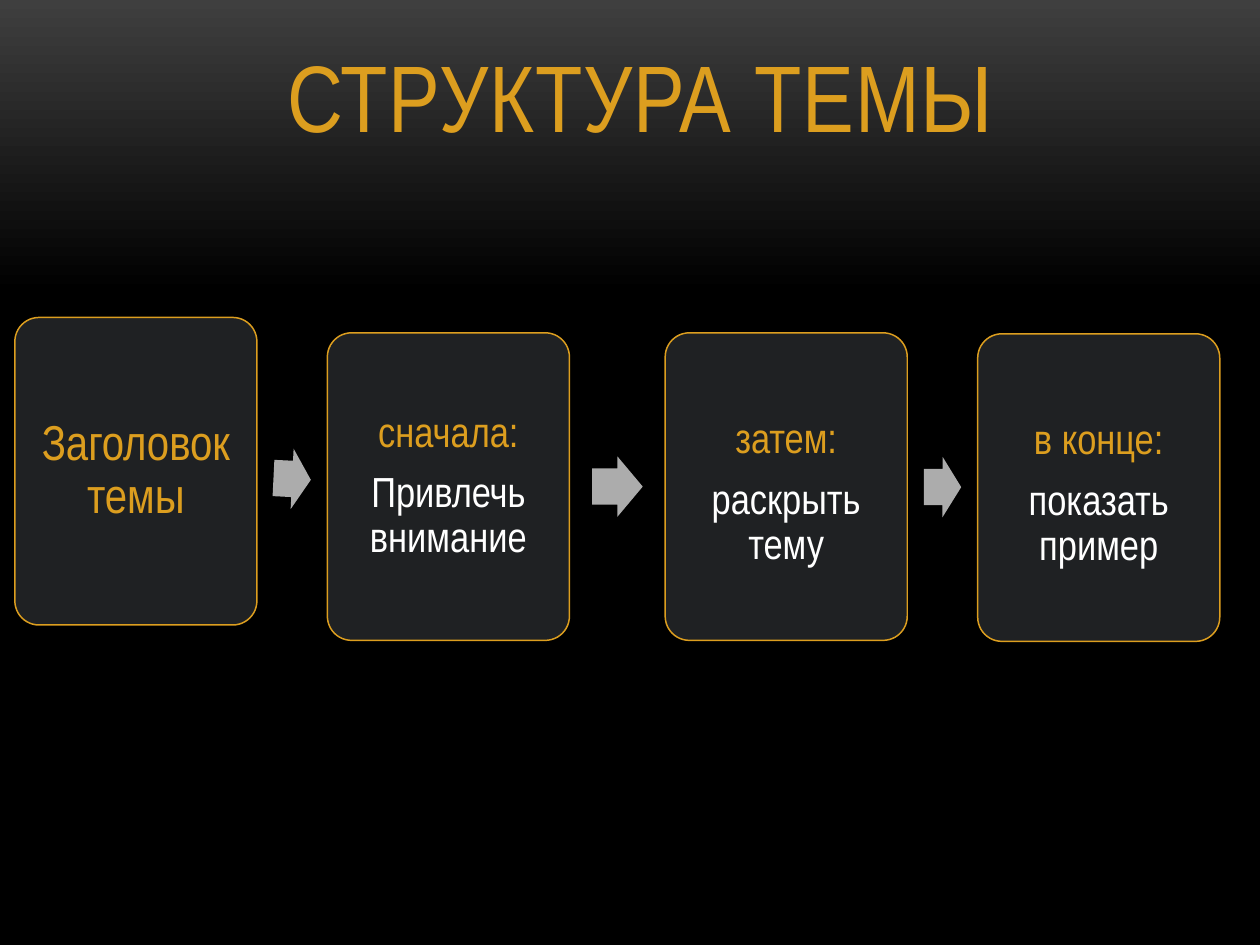
from itertools import pairwise
from math import atan2, degrees

from pptx import Presentation
from pptx.dml.color import RGBColor
from pptx.enum.shapes import MSO_SHAPE as Shape
from pptx.enum.text import MSO_ANCHOR as Anchor, PP_ALIGN as Align
from pptx.util import Cm, Pt

COLORS = {
    "glow": "3F3F3F",
    "black": "000000",
    "gold": "DC9E1F",
    "card": "1F2123",
    "arrow": "ACACAC",
    "white": "FFFFFF",
}
FONT = "Arial Narrow"
CARD_WIDTH, CARD_HEIGHT = 4.88, 6.2
ARROW_HEIGHT, ARROW_SHARE = 1.22, 0.53
STEPS = [
    (0, 0, 28, 0, ["Заголовок темы"]),
    (6.3, 0.31, 24, 0, ["сначала:", "Привлечь внимание"]),
    (13.11, 0.31, 24, 0.26, ["затем:", "раскрыть тему"]),
    (19.41, 0.33, 24, 0.26, ["в конце:", "показать пример"]),
]


def color(name):
    """Return the named colour of the palette."""
    return RGBColor.from_string(COLORS[name])


def write(para, text, *, size, tone, line=1.0, after=0, spacing=0):
    """Write one centred paragraph with the given format."""
    para.alignment = Align.CENTER
    para.line_spacing = line
    para.space_after = Pt(after)
    span = para.add_run()
    span.text = text
    span.font.name = FONT
    span.font.size = Pt(size)
    span.font.color.rgb = color(tone)
    if spacing:
        span.font._element.set("spc", str(round(spacing * 100)))


def add_solid(page, kind, left, top, width, height, tone):
    """Add a plain filled shape without line or shadow."""
    shape = page.shapes.add_shape(kind, Cm(left), Cm(top), Cm(width), Cm(height))
    shape.shadow.inherit = False
    shape.fill.solid()
    shape.fill.fore_color.rgb = color(tone)
    shape.line.fill.background()
    return shape


def add_background(page):
    """Fade the page from grey at the top to black."""
    fill = page.background.fill
    fill.gradient()
    fill.gradient_angle = 270
    for stop, tone, position in zip(fill.gradient_stops, ("glow", "black"), (0, 0.31)):
        stop.color.rgb = color(tone)
        stop.position = position


def add_title(page, left, top, width, height):
    """Place the heading at the bottom of its box."""
    box = page.shapes.add_textbox(Cm(left), Cm(top), Cm(width), Cm(height))
    frame = box.text_frame
    frame.word_wrap = True
    frame.vertical_anchor = Anchor.BOTTOM
    write(frame.paragraphs[0], "СТРУКТУРА ТЕМЫ", size=54, tone="gold", spacing=0.5)


def add_card(page, left, top, size, drop, lines):
    """Place a rounded card with a gold heading and white text."""
    card = add_solid(page, Shape.ROUNDED_RECTANGLE, left, top, CARD_WIDTH, CARD_HEIGHT, "card")
    card.adjustments[0] = 0.1
    card.line.color.rgb = color("gold")
    card.line.width = Pt(0.85)
    frame = card.text_frame
    frame.word_wrap = True
    frame.vertical_anchor = Anchor.MIDDLE
    frame.margin_left = frame.margin_right = frame.margin_bottom = Cm(0.4)
    frame.margin_top = Cm(0.4 + drop)
    for index, (text, tone) in enumerate(zip(lines, ("gold", "white"))):
        para = frame.add_paragraph() if index else frame.paragraphs[0]
        write(para, text, size=size, tone=tone, line=0.9, after=0.35 * size)


def add_arrow(page, start, end):
    """Place an arrow midway between two cards, turned towards the second."""
    (x1, y1), (x2, y2) = start, end
    width = ARROW_SHARE * (x2 - x1 - CARD_WIDTH)
    center_x = (x1 + x2 + CARD_WIDTH) / 2
    center_y = (y1 + y2 + CARD_HEIGHT) / 2
    arrow = add_solid(page, Shape.RIGHT_ARROW, center_x - width / 2,
                      center_y - ARROW_HEIGHT / 2, width, ARROW_HEIGHT, "arrow")
    arrow.adjustments[0] = 0.6
    arrow.adjustments[1] = 0.5
    arrow.rotation = degrees(atan2(y2 - y1, x2 - x1))


def add_flow(page, left, top):
    """Place the cards and the arrows that join them."""
    corners = [(left + x, top + y) for x, y, *_ in STEPS]
    for corner, (_, _, size, drop, lines) in zip(corners, STEPS):
        add_card(page, *corner, size, drop, lines)
    for start, end in pairwise(corners):
        add_arrow(page, start, end)


def main():
    """Build and save the deck."""
    deck = Presentation()
    deck.slide_width, deck.slide_height = Cm(25.4), Cm(19.05)
    page = deck.slides.add_slide(deck.slide_layouts[6])
    add_background(page)
    add_title(page, 1.9, 0, 22.02, 3.18)
    add_flow(page, 0.3, 6.4)
    deck.save("out.pptx")


if __name__ == "__main__":
    main()
